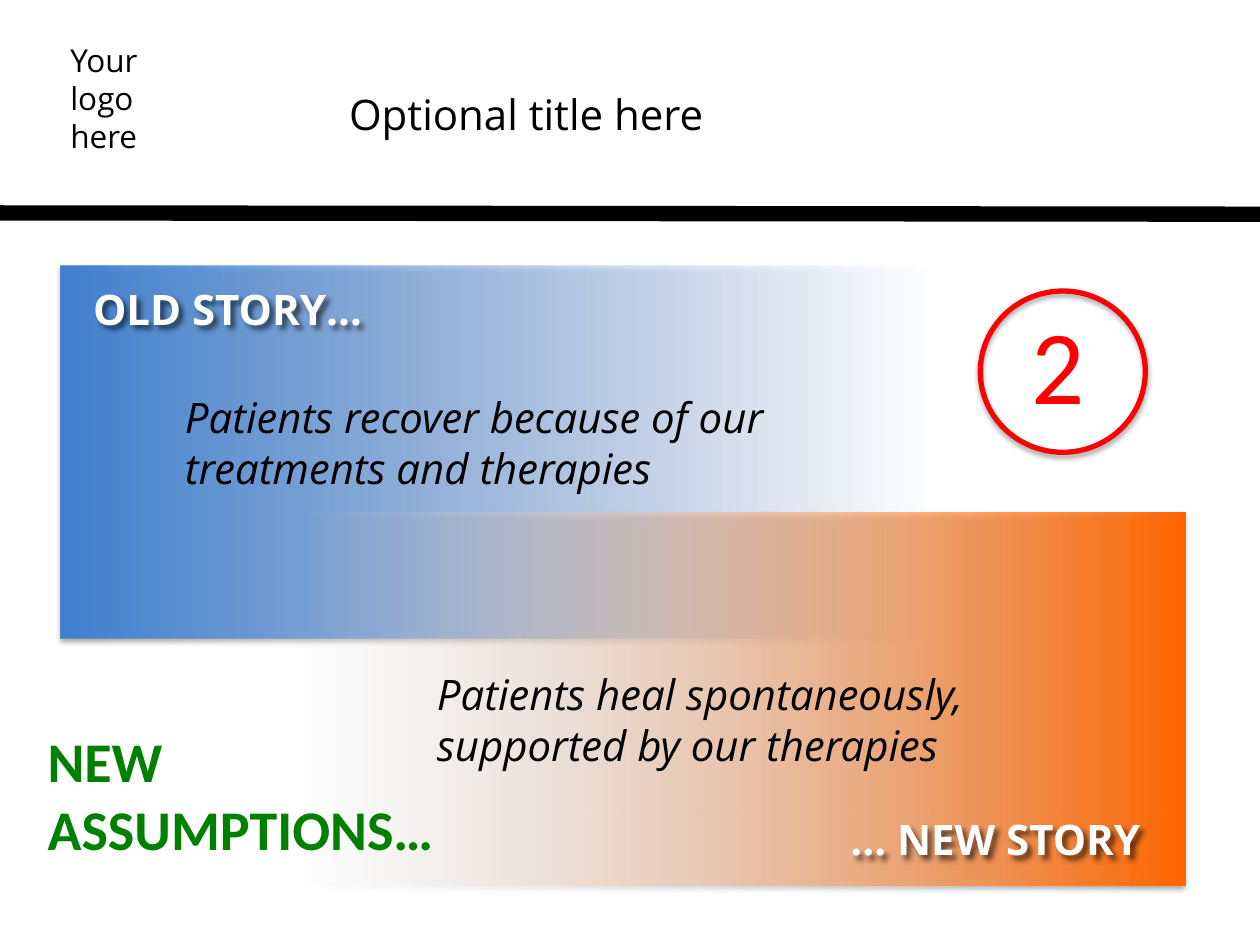
from lxml import etree
from pptx import Presentation
from pptx import util as u
from pptx.dml.color import RGBColor
from pptx.enum import shapes, text
from pptx.oxml import ns

Inches = u.Inches
COLORS = {
    "black": "000000",
    "white": "FFFFFF",
    "blue": "3F80CE",
    "pale_blue": "A4C4FF",
    "orange": "FF6600",
    "red": "FF0000",
    "green": "008000",
}


def rgb(name):
    return RGBColor.from_string(COLORS[name])


def add_shadow(shape, opacity=35, blur=3.1, distance=1.8, angle=90):
    shape.shadow.inherit = False
    effects = shape._element.spPr.find(ns.qn("a:effectLst"))
    shadow = etree.SubElement(
        effects, ns.qn("a:outerShdw"), blurRad=str(u.Pt(blur)),
        dist=str(u.Pt(distance)), dir=str(angle * 60000), rotWithShape="0")
    color = etree.SubElement(shadow, ns.qn("a:srgbClr"), val=COLORS["black"])
    etree.SubElement(color, ns.qn("a:alpha"), val=str(opacity * 1000))


def write_text(shape, words, size=24, font="Open Sans", color="black",
               bold=False, italic=False):
    frame = shape.text_frame
    frame.word_wrap = True
    frame.auto_size = text.MSO_AUTO_SIZE.NONE
    frame.vertical_anchor = text.MSO_ANCHOR.TOP
    paragraph = frame.paragraphs[0]
    paragraph.alignment = text.PP_ALIGN.LEFT
    run = paragraph.add_run()
    run.text = words
    run.font.size = u.Pt(size)
    run.font.name = font
    run.font.bold = bold
    run.font.italic = italic
    run.font.color.rgb = rgb(color)


def add_label(slide, box, words, **style):
    label = slide.shapes.add_textbox(*map(Inches, box))
    write_text(label, words, **style)
    return label


def add_header(slide, left, top, width, height):
    bottom = top + height
    rule = slide.shapes.add_connector(
        shapes.MSO_CONNECTOR.STRAIGHT, Inches(left), Inches(bottom - 0.01),
        Inches(left + width), Inches(bottom))
    rule.line.color.rgb = rgb("black")
    rule.line.width = u.Pt(8.75)
    etree.SubElement(rule._element.spPr, ns.qn("a:effectLst"))

    add_label(slide, (left + 0.46, top + 0.28, 1.17, 1.01),
              "Your logo here", size=18)

    title = slide.shapes.title
    title.left, title.top = Inches(left + 2.67), Inches(top + 0.65)
    title.width, title.height = Inches(3.09), Inches(0.5)
    write_text(title, "Optional title here")


def add_panel(slide, box, solid, faded, fade_end=1, mirrored=False):
    panel = slide.shapes.add_shape(
        shapes.MSO_SHAPE.RECTANGLE, *map(Inches, box))
    panel.line.fill.background()
    panel.fill.gradient()
    panel.fill.gradient_angle = 0
    stops = panel.fill.gradient_stops
    for stop, color, position in zip(stops, (solid, faded), (0, fade_end)):
        stop.color.rgb = rgb(color)
        stop.position = position
    properties = panel._element.spPr
    last_color = list(properties.iter(ns.qn("a:srgbClr")))[-1]
    etree.SubElement(last_color, ns.qn("a:alpha"), val="0")
    if mirrored:
        properties.find(ns.qn("a:xfrm")).set("flipH", "1")
    add_shadow(panel)


def add_story(slide, box, heading, heading_offset, body, body_offset):
    left, top = box[:2]
    for words, (x, y), size, style in (
            (heading, heading_offset, (2.9, 0.5),
             {"color": "white", "bold": True}),
            (body, body_offset, (5.5, 0.91), {"italic": True})):
        label = add_label(slide, (left + x, top + y, *size), words, **style)
        if words == heading:
            add_shadow(label, opacity=60, blur=3, distance=3, angle=45)


def add_number(slide, left, top, width, height, number):
    add_label(slide, (left + 0.31, top + 0.02, 0.89, 1.11), number,
              size=60, font="Calibri", color="red")
    circle = slide.shapes.add_shape(
        shapes.MSO_SHAPE.OVAL, *map(Inches, (left, top, width, height)))
    circle.fill.background()
    circle.line.color.rgb = rgb("red")
    circle.line.width = u.Pt(3)
    add_shadow(circle)


def main():
    presentation = Presentation()
    presentation.slide_width = Inches(10)
    presentation.slide_height = Inches(7.5)
    slide = presentation.slides.add_slide(presentation.slide_layouts[5])

    old_box = (0.48, 2.11, 7.04, 2.96)
    new_box = (2.37, 4.07, 7.04, 2.96)

    add_header(slide, 0, 0, 10, 1.7)
    add_panel(slide, old_box, "blue", "pale_blue", fade_end=0.98)
    add_panel(slide, new_box, "orange", "white", mirrored=True)
    add_story(slide, old_box, "OLD STORY…", (0.16, 0.09),
              "Patients recover because of our treatments and therapies",
              (0.89, 0.95))
    add_story(slide, new_box, "… NEW STORY", (4.28, 2.34),
              "Patients heal spontaneously, supported by our therapies",
              (1, 1.19))
    add_number(slide, 7.78, 2.31, 1.31, 1.28, "2")
    add_label(slide, (0.28, 5.72, 3.47, 1.18), "NEW ASSUMPTIONS…",
              size=32, font="Calibri", color="green", bold=True)

    presentation.save("out.pptx")


if __name__ == "__main__":
    main()
